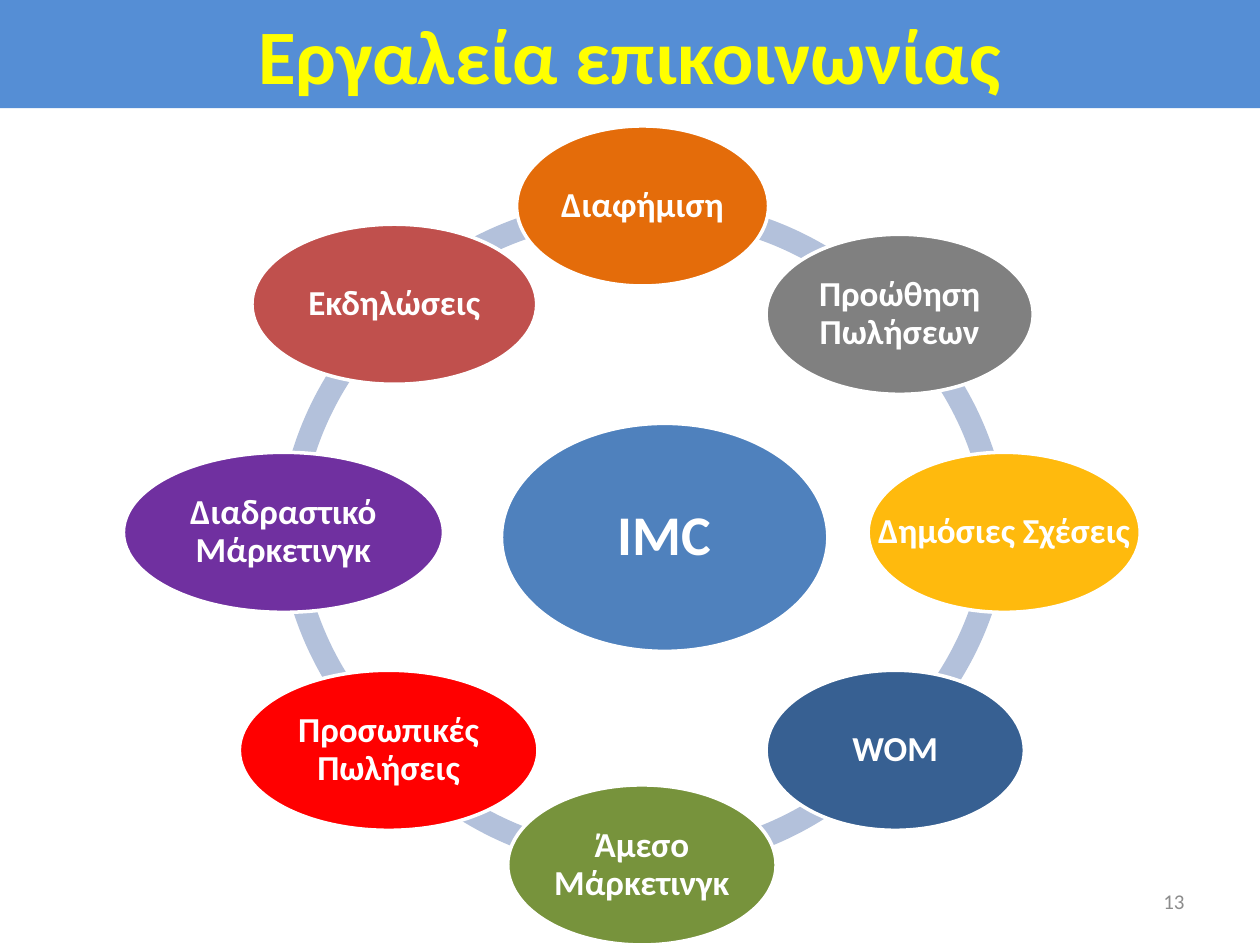
from dataclasses import dataclass

from pptx import Presentation
from pptx.dml.color import RGBColor
from pptx.enum.shapes import MSO_SHAPE
from pptx.enum.text import MSO_ANCHOR, PP_ALIGN
from pptx.util import Inches, Pt

RECT, OVAL, ARC = MSO_SHAPE.RECTANGLE, MSO_SHAPE.OVAL, MSO_SHAPE.BLOCK_ARC
MIDDLE = MSO_ANCHOR.MIDDLE
CENTER, RIGHT = PP_ALIGN.CENTER, PP_ALIGN.RIGHT


@dataclass(frozen=True)
class Theme:
    font: str = "Calibri"
    band: str = "558ED5"
    title: str = "FFFF00"
    ring: str = "B3C1DB"
    hub: str = "4F81BD"
    white: str = "FFFFFF"
    gray: str = "8C8C8C"
    title_size: int = 44
    hub_size: int = 32
    node_size: int = 20
    page_size: int = 12
    edge: int = 2


@dataclass(frozen=True)
class Node:
    text: str
    left: float
    top: float
    width: float
    fill: str
    height: float = 1.27
    size: int = Theme.node_size
    inset: float = 0.03
    wrap: bool = True


@dataclass(frozen=True)
class Arc:
    left: float
    top: float
    start: float
    end: float


THEME = Theme()
ARC_SIZE = 5.32
ARC_THICK = 0.034

# Ring segments, clockwise from the top left
ARCS = [
    Arc(2.33, 1.58, 134.63, 163.3),
    Arc(2.7, 1.34, 2.93, 29.02),
    Arc(2.46, 1.59, 24.53, 54.4),
    Arc(2.4, 1.59, 53.61, 83.47),
    Arc(2.2, 1.38, 79.62, 105.5),
    Arc(2.2, 1.71, 109.89, 137.02),
    Arc(2.54, 1.58, 160.65, 190.79),
    Arc(2.7, 1.75, 187.7, 213.56),
]

# Hub first, then the tools clockwise from the top
NODES = [
    Node("IMC", 3.98, 3.36, 2.59, THEME.hub, 1.81, THEME.hub_size, 0.04),
    Node("Διαφήμιση", 4.1, 1, 2, "E46C0A"),
    Node("Προώθηση Πωλήσεων", 6.08, 1.86, 2.12, "808080"),
    Node("Δημόσιες Σχέσεις", 6.89, 3.59, 2.16, "FFBA0D", wrap=False),
    Node("WOM", 6.08, 5.32, 2.05, "376092"),
    Node("Άμεσο Μάρκετινγκ", 4.03, 6.23, 2.13, "77933C"),
    Node("Προσωπικές Πωλήσεις", 1.9, 5.32, 2.37, "FF0000"),
    Node("Διαδραστικό Μάρκετινγκ", 0.98, 3.59, 2.54, "7030A0"),
    Node("Εκδηλώσεις", 2, 1.78, 2.26, "C0504D"),
]


def add_form(slide, kind, left: float, top: float, width: float,
             height: float, fill: str):
    """Add a flat filled shape without an outline."""
    form = slide.shapes.add_shape(kind, Inches(left), Inches(top),
                                  Inches(width), Inches(height))
    form.shadow.inherit = False
    form.fill.solid()
    form.fill.fore_color.rgb = RGBColor.from_string(fill)
    form.line.fill.background()
    return form


def put_text(form, text: str, size: int, color: str, bold: bool = True,
             align=CENTER):
    """Write one run into a shape and return its text frame."""
    frame = form.text_frame
    frame.word_wrap = True
    frame.vertical_anchor = MIDDLE
    para = frame.paragraphs[0]
    para.alignment = align
    run = para.add_run()
    run.text = text
    run.font.name = THEME.font
    run.font.size = Pt(size)
    run.font.bold = bold
    run.font.color.rgb = RGBColor.from_string(color)
    return frame


def draw_arc(slide, arc: Arc) -> None:
    form = add_form(slide, ARC, arc.left, arc.top, ARC_SIZE, ARC_SIZE,
                    THEME.ring)
    for index, value in enumerate((arc.start, arc.end, ARC_THICK)):
        form.adjustments[index] = value


def draw_node(slide, node: Node) -> None:
    form = add_form(slide, OVAL, node.left, node.top, node.width,
                    node.height, node.fill)
    form.line.color.rgb = RGBColor.from_string(THEME.white)
    form.line.width = Pt(THEME.edge)
    frame = put_text(form, node.text, node.size, THEME.white)
    frame.word_wrap = node.wrap
    frame.margin_left = frame.margin_right = Inches(node.inset)
    frame.margin_top = frame.margin_bottom = Inches(node.inset)
    frame.paragraphs[0].line_spacing = 0.9


def main() -> None:
    deck = Presentation()
    deck.slide_width, deck.slide_height = Inches(10), Inches(7.5)
    slide = deck.slides.add_slide(deck.slide_layouts[6])

    # Title band
    band = add_form(slide, RECT, 0, 0, 10, 0.86, THEME.band)
    put_text(band, "Εργαλεία επικοινωνίας", THEME.title_size, THEME.title)

    # Ring, hub and tools
    for arc in ARCS:
        draw_arc(slide, arc)
    for node in NODES:
        draw_node(slide, node)

    # Page number
    page = slide.shapes.add_textbox(Inches(7.17), Inches(6.95),
                                    Inches(2.33), Inches(0.4))
    put_text(page, "13", THEME.page_size, THEME.gray, False, RIGHT)

    deck.save("out.pptx")


if __name__ == "__main__":
    main()
